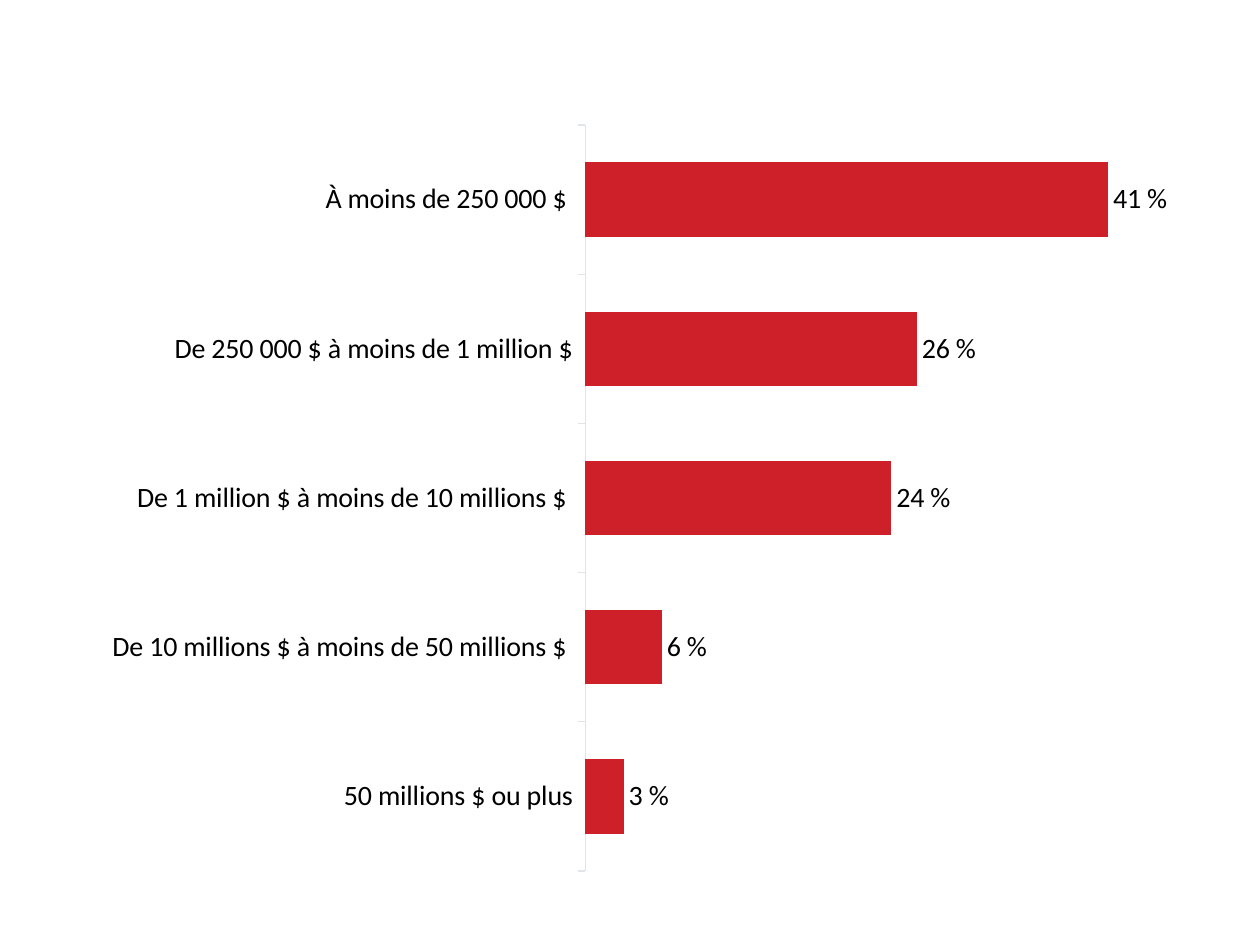
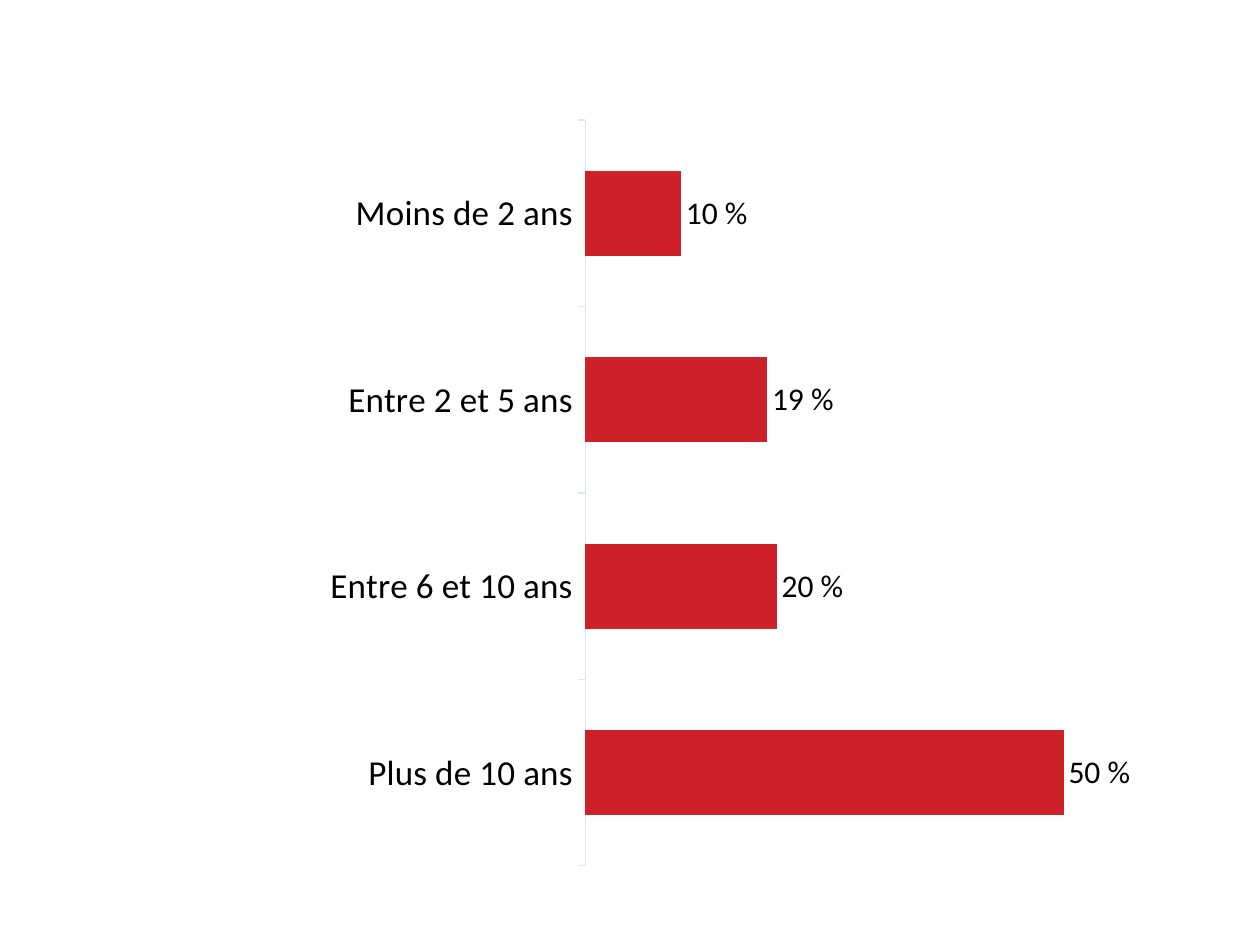
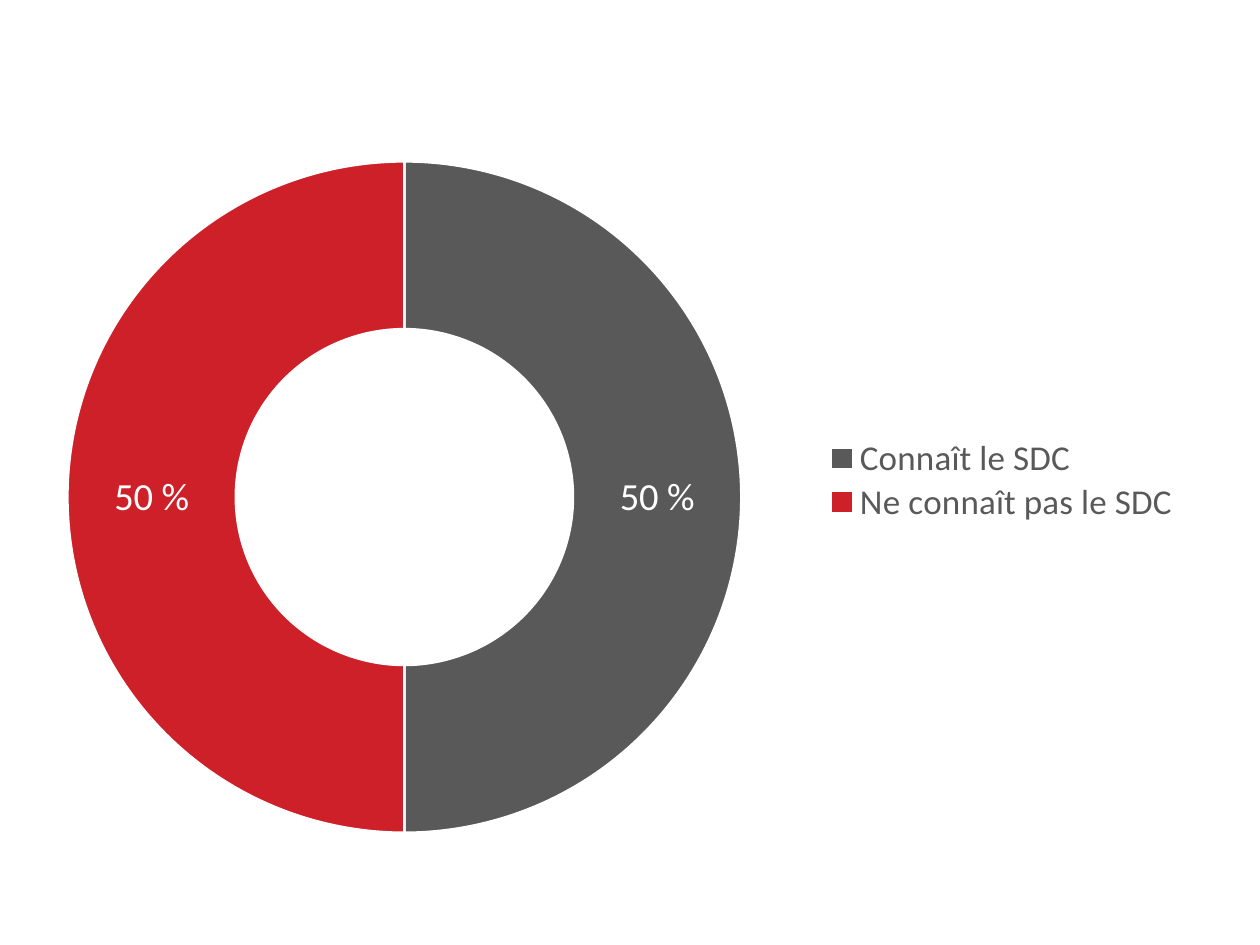
from dataclasses import dataclass

from lxml.etree import SubElement
from pptx import Presentation
from pptx.chart.data import CategoryChartData
from pptx.dml.color import RGBColor
from pptx.enum.chart import (XL_CHART_TYPE, XL_LABEL_POSITION, XL_LEGEND_POSITION,
                             XL_TICK_LABEL_POSITION, XL_TICK_MARK)
from pptx.oxml.ns import qn
from pptx.util import Inches, Pt


@dataclass(frozen=True)
class Theme:
    red: RGBColor = RGBColor.from_string("CE2029")
    gray: RGBColor = RGBColor.from_string("595959")
    axis: RGBColor = RGBColor.from_string("E0E5EB")
    black: RGBColor = RGBColor.from_string("000000")
    white: RGBColor = RGBColor.from_string("FFFFFF")
    font: str = "Calibri"
    chart_font: str = "Karla"
    base_size: int = 10
    legend_size: int = 20
    share_size: int = 22
    percent: str = "0 %"


THEME = Theme()


def style_font(font, size, color, name=THEME.font):
    for attribute, value in {"size": Pt(size), "name": name, "bold": False}.items():
        setattr(font, attribute, value)
    font.color.rgb = color


def set_layout(parent, index, **fractions):
    """Place a chart part at fractions of the chart area."""
    for old_layout in parent.findall(qn("c:layout")):
        parent.remove(old_layout)
    layout = SubElement(parent, qn("c:layout"))
    parent.insert(index, layout)
    manual = SubElement(layout, qn("c:manualLayout"))
    settings = {"xMode": "edge", "yMode": "edge", **fractions}
    if parent.tag == qn("c:plotArea"):
        settings = {"layoutTarget": "inner", **settings}
    for tag, value in settings.items():
        SubElement(manual, qn(f"c:{tag}")).set("val", str(value))


prs = Presentation()
prs.slide_width, prs.slide_height = Inches(10), Inches(7.5)
blank_layout = prs.slide_layouts[6]

# Company revenue and company age
surveys = [
    {"top": 0.87, "gap": 100, "maximum": 0.45, "category_size": 16, "label_size": 16,
     "answers": {
         "À moins de 250 000 $ ": 0.41,
         "De 250 000 $ à moins de 1 million $": 0.26,
         "De 1 million $ à moins de 10 millions $ ": 0.24,
         "De 10 millions $ à moins de 50 millions $ ": 0.06,
         "50 millions $ ou plus": 0.03}},
    {"top": 0.83, "gap": 120, "maximum": 0.6, "category_size": 20, "label_size": 18,
     "answers": {
         "Moins de 2 ans": 0.1,
         "Entre 2 et 5 ans": 0.19,
         "Entre 6 et 10 ans": 0.2,
         "Plus de 10 ans": 0.5}},
]

for survey in surveys:
    slide = prs.slides.add_slide(blank_layout)
    data = CategoryChartData(number_format="0%")
    data.categories = survey["answers"].keys()
    data.add_series("Series 1", survey["answers"].values())
    chart = slide.shapes.add_chart(
        XL_CHART_TYPE.BAR_CLUSTERED, Inches(0.15), Inches(survey["top"]),
        Inches(9.69), Inches(6.16), data).chart
    chart.has_title = chart.has_legend = False
    style_font(chart.font, THEME.base_size, THEME.black, THEME.chart_font)
    set_layout(chart.element.xpath("//c:plotArea")[0], 0, x=0.464, y=0.02, w=0.47, h=0.961)

    answer_axis = chart.category_axis
    for attribute, value in {"reverse_order": True,
                             "has_major_gridlines": False,
                             "major_tick_mark": XL_TICK_MARK.OUTSIDE,
                             "minor_tick_mark": XL_TICK_MARK.NONE,
                             "tick_label_position": XL_TICK_LABEL_POSITION.LOW}.items():
        setattr(answer_axis, attribute, value)
    style_font(answer_axis.tick_labels.font, survey["category_size"], THEME.black)
    answer_axis.format.line.color.rgb = THEME.axis
    answer_axis.format.line.width = Pt(0.75)

    for attribute, value in {"minimum_scale": 0, "maximum_scale": survey["maximum"],
                             "has_major_gridlines": False, "visible": False}.items():
        setattr(chart.value_axis, attribute, value)

    bars = chart.plots[0]
    bars.gap_width = survey["gap"]
    bars.vary_by_categories = False
    shares = bars.series[0]
    shares.format.fill.solid()
    shares.format.fill.fore_color.rgb = THEME.red
    for attribute, value in {"show_value": True, "number_format": THEME.percent,
                             "number_format_is_linked": False,
                             "position": XL_LABEL_POSITION.OUTSIDE_END}.items():
        setattr(shares.data_labels, attribute, value)
    style_font(shares.data_labels.font, survey["label_size"], THEME.black)

# Awareness of the SDC
slide = prs.slides.add_slide(blank_layout)
data = CategoryChartData(number_format="0%")
data.categories = ["Connaît le SDC", "Ne connaît pas le SDC"]
data.add_series("Series 1", [0.5, 0.5])
chart = slide.shapes.add_chart(
    XL_CHART_TYPE.DOUGHNUT, Inches(0.08), Inches(1.27), Inches(9.66), Inches(5.35), data).chart
chart.has_title = False
style_font(chart.font, THEME.base_size, THEME.black)
set_layout(chart.element.xpath("//c:plotArea")[0], 0, x=0.024, y=0, w=0.6, h=1)
chart.element.xpath("//c:holeSize")[0].set("val", "63")

chart.has_legend = True
chart.legend.position = XL_LEGEND_POSITION.RIGHT
chart.legend.include_in_layout = False
style_font(chart.legend.font, THEME.legend_size, THEME.gray)
set_layout(chart.element.xpath("//c:legend")[0], 1, x=0.665, y=0.41, w=0.3, h=0.13)

awareness = chart.plots[0].series[0]
for index, color in enumerate([THEME.gray, THEME.red]):
    segment = awareness.points[index].format
    segment.fill.solid()
    segment.fill.fore_color.rgb = color
    segment.line.color.rgb = THEME.white
    segment.line.width = Pt(1.5)
for attribute, value in {"show_value": True, "show_percentage": False,
                         "number_format": THEME.percent,
                         "number_format_is_linked": False}.items():
    setattr(awareness.data_labels, attribute, value)
style_font(awareness.data_labels.font, THEME.share_size, THEME.white)

prs.save("out.pptx")
